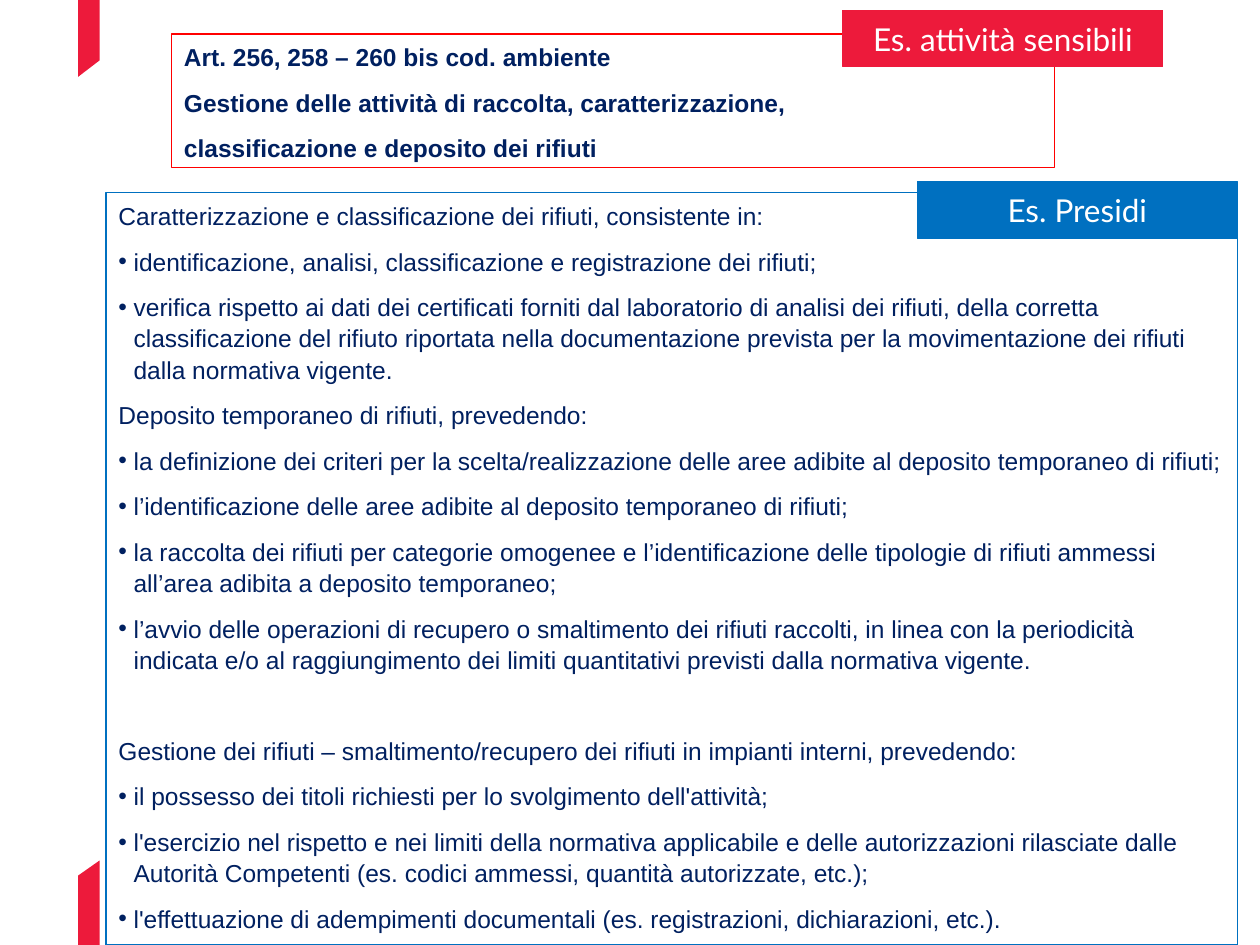
from dataclasses import dataclass

from lxml.etree import SubElement
from pptx import Presentation
from pptx.dml.color import RGBColor
from pptx.enum.shapes import MSO_SHAPE
from pptx.enum.text import MSO_ANCHOR, MSO_AUTO_SIZE, PP_ALIGN
from pptx.oxml.ns import qn
from pptx.util import Inches, Pt


@dataclass(frozen=True)
class Theme:
    accent: RGBColor = RGBColor(0xED, 0x1A, 0x3B)
    red: RGBColor = RGBColor(0xFF, 0x00, 0x00)
    blue: RGBColor = RGBColor(0x00, 0x70, 0xC0)
    navy: RGBColor = RGBColor(0x00, 0x20, 0x60)
    white: RGBColor = RGBColor(0xFF, 0xFF, 0xFF)
    text_font: str = "Arial"
    tag_font: str = "Lato"
    text_size: int = 14
    tag_size: int = 18


THEME = Theme()
BULLET_INDENT = Inches(0.12)
GROUP_GAP = 26

ACTIVITY = [
    "Art. 256, 258 – 260 bis cod. ambiente",
    "Gestione delle attività di raccolta, caratterizzazione,",
    "classificazione e deposito dei rifiuti",
]

# Each group: heading, space before it in points, bulleted items
CONTROLS = [
    ("Caratterizzazione e classificazione dei rifiuti, consistente in:", 0, [
        "identificazione, analisi, classificazione e registrazione dei rifiuti;",
        "verifica rispetto ai dati dei certificati forniti dal laboratorio di analisi dei rifiuti, "
        "della corretta classificazione del rifiuto riportata nella documentazione prevista per la "
        "movimentazione dei rifiuti dalla normativa vigente.",
    ]),
    ("Deposito temporaneo di rifiuti, prevedendo:", 0, [
        "la definizione dei criteri per la scelta/realizzazione delle aree adibite al deposito "
        "temporaneo di rifiuti;",
        "l’identificazione delle aree adibite al deposito temporaneo di rifiuti;",
        "la raccolta dei rifiuti per categorie omogenee e l’identificazione delle tipologie di "
        "rifiuti ammessi all’area adibita a deposito temporaneo;",
        "l’avvio delle operazioni di recupero o smaltimento dei rifiuti raccolti, in linea con la "
        "periodicità indicata e/o al raggiungimento dei limiti quantitativi previsti dalla "
        "normativa vigente.",
    ]),
    ("Gestione dei rifiuti – smaltimento/recupero dei rifiuti in impianti interni, prevedendo:",
     GROUP_GAP, [
        "il possesso dei titoli richiesti per lo svolgimento dell'attività;",
        "l'esercizio nel rispetto e nei limiti della normativa applicabile e delle autorizzazioni "
        "rilasciate dalle Autorità Competenti (es. codici ammessi, quantità autorizzate, etc.);",
        "l'effettuazione di adempimenti documentali (es. registrazioni, dichiarazioni, etc.).",
    ]),
]


def style_span(span, font, size, color, bold=False):
    span.font.name = font
    span.font.size = Pt(size)
    span.font.color.rgb = color
    span.font.bold = bold


def set_bullet(para, bulleted):
    properties = para._p.get_or_add_pPr()
    indent = BULLET_INDENT if bulleted else 0
    properties.set("marL", str(indent))
    properties.set("indent", str(-indent))
    if bulleted:
        SubElement(properties, qn("a:buChar")).set("char", "•")
    else:
        SubElement(properties, qn("a:buNone"))


def fill_text(frame, items, bold=False):
    """Write (text, bulleted, space before) items as paragraphs."""
    for index, (text, bulleted, space_before) in enumerate(items):
        para = frame.add_paragraph() if index else frame.paragraphs[0]
        para.text = text
        para.alignment = PP_ALIGN.LEFT
        para.line_spacing = 1.07
        para.space_before = Pt(space_before)
        para.space_after = Pt(8)
        set_bullet(para, bulleted)
        style_span(para.runs[0], THEME.text_font, THEME.text_size, THEME.navy, bold)


def outline_box(box, left, top, width, height, color):
    """Place a text placeholder and give it a thin frame."""
    box.left, box.top = Inches(left), Inches(top)
    box.width, box.height = Inches(width), Inches(height)
    box.line.color.rgb = color
    box.line.width = Pt(0.75)
    frame = box.text_frame
    frame.word_wrap = True
    frame.auto_size = MSO_AUTO_SIZE.NONE
    frame.vertical_anchor = MSO_ANCHOR.TOP


def add_tag(slide, left, top, text, color):
    tag = slide.shapes.add_shape(
        MSO_SHAPE.RECTANGLE, Inches(left), Inches(top), Inches(2.54), Inches(0.45))
    tag.shadow.inherit = False
    tag.fill.solid()
    tag.fill.fore_color.rgb = color
    tag.line.color.rgb = color
    tag.line.width = Pt(0.5)
    frame = tag.text_frame
    frame.margin_left = frame.margin_right = Inches(0.08)
    frame.margin_top = frame.margin_bottom = Inches(0.08)
    frame.vertical_anchor = MSO_ANCHOR.MIDDLE
    frame.text = text
    para = frame.paragraphs[0]
    para.alignment = PP_ALIGN.CENTER
    style_span(para.runs[0], THEME.tag_font, THEME.tag_size, THEME.white)


def add_ribbon(slide, edge, left_tip, right_tip):
    """Draw a slanted band from a slide edge to its two tips."""
    left, right = 0.62, 0.79
    points = [(Inches(x), Inches(y)) for x, y in
              [(left, edge), (right, edge), (right, right_tip), (left, left_tip)]]
    builder = slide.shapes.build_freeform(*points[0])
    builder.add_line_segments(points[1:], close=True)
    ribbon = builder.convert_to_shape()
    ribbon.shadow.inherit = False
    ribbon.fill.solid()
    ribbon.fill.fore_color.rgb = THEME.accent
    ribbon.line.fill.background()


def main():
    deck = Presentation()
    deck.slide_width, deck.slide_height = Inches(10), Inches(7.5)
    slide = deck.slides.add_slide(deck.slide_layouts[1])
    title, body = slide.placeholders

    # Side ribbons
    add_ribbon(slide, edge=7.5, left_tip=6.95, right_tip=6.83)
    add_ribbon(slide, edge=0, left_tip=0.61, right_tip=0.48)

    # Sensitive activity
    outline_box(title, 1.36, 0.27, 7.01, 1.06, THEME.red)
    fill_text(title.text_frame, [(line, False, 0) for line in ACTIVITY], bold=True)

    # Controls
    outline_box(body, 0.84, 1.53, 8.98, 5.97, THEME.blue)
    items = []
    for heading, gap, points in CONTROLS:
        items.append((heading, False, gap))
        items.extend((point, True, 0) for point in points)
    fill_text(body.text_frame, items)

    # Tags
    add_tag(slide, 6.69, 0.08, "Es. attività sensibili", THEME.accent)
    add_tag(slide, 7.28, 1.44, "Es. Presidi", THEME.blue)

    deck.save("out.pptx")


if __name__ == "__main__":
    main()
